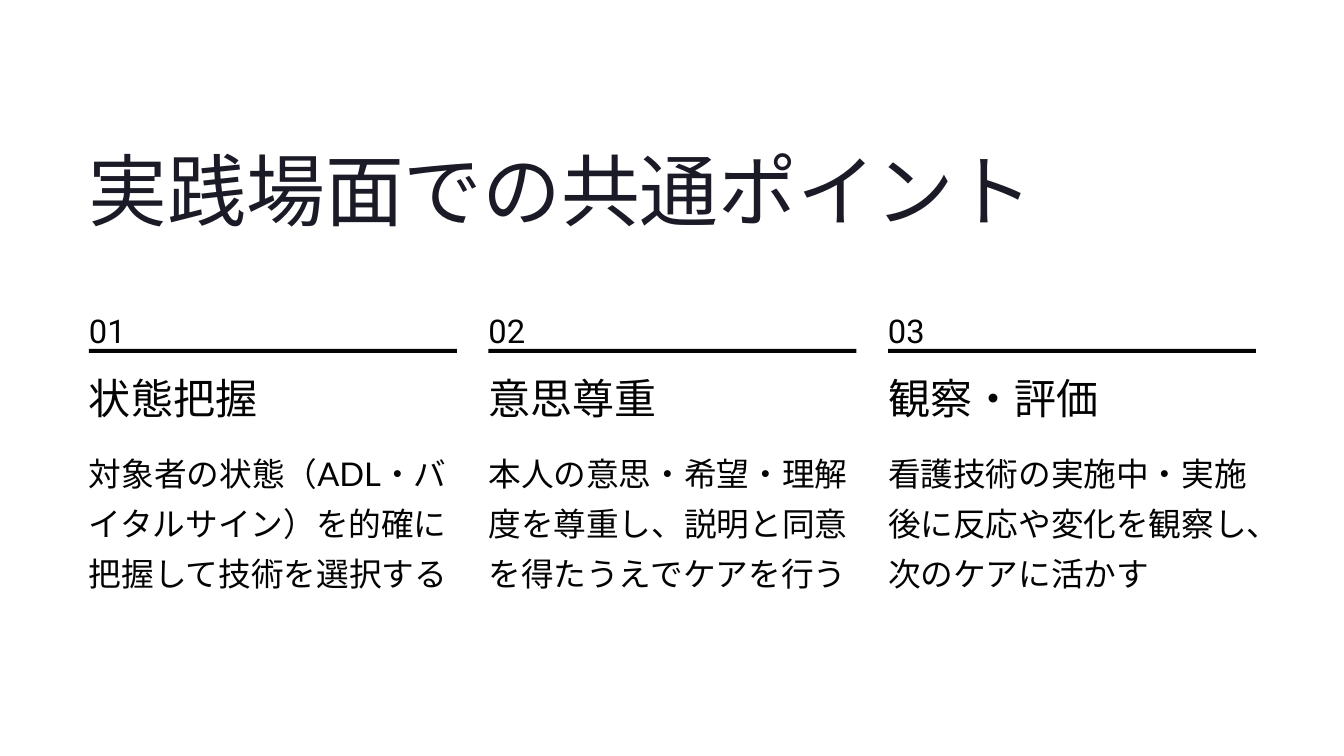
import pptx
import pptx.util
import pptx.dml.color
import pptx.enum.lang
import pptx.enum.shapes
import pptx.enum.text
from dataclasses import dataclass
from lxml import etree
from pptx.oxml.ns import qn

# Content
HEADLINE = "実践場面での共通ポイント"
POINTS = [
    ("01", "状態把握", "対象者の状態（ADL・バイタルサイン）を的確に把握して技術を選択する"),
    ("02", "意思尊重", "本人の意思・希望・理解度を尊重し、説明と同意を得たうえでケアを行う"),
    ("03", "観察・評価", "看護技術の実施中・実施後に反応や変化を観察し、次のケアに活かす"),
]


# Theme: each style is font, size, line spacing, colour
@dataclass(frozen=True)
class Theme:
    ink: str = "030303"
    headline: tuple = ("Inter", 67.5, 84.5, "1B1B27")
    number: tuple = ("Roboto", 28, 43, ink)
    heading: tuple = ("Inter", 36, 42, ink)
    detail: tuple = ("Lato", 28, 43, ink)


THEME = Theme()

# Layout in px, 84 to the inch
PX = pptx.util.Inches(1) // 84
SLIDE_W, SLIDE_H = 1344, 756
LEFT, RIGHT, COLUMN_W = 89, 1256, 368
PITCH = (RIGHT - LEFT - COLUMN_W) / (len(POINTS) - 1)
HEADLINE_BOX = (LEFT, 138, 951, 99)
NUMBER_Y, NUMBER_W, NUMBER_H = 300, 32, 39
RULE_Y, RULE_H = 349, 4
HEADING_Y, HEADING_H = 374, 50
DETAIL_Y, DETAIL_H = 443, 152


def emu(*lengths):
    return [round(length * PX) for length in lengths]


def write(holder, text, style, wrap=False):
    typeface, size, spacing, colour = style
    frame = holder.text_frame
    frame.text = text
    frame.word_wrap = wrap
    frame.auto_size = pptx.enum.text.MSO_AUTO_SIZE.NONE
    frame.vertical_anchor = pptx.enum.text.MSO_ANCHOR.TOP
    frame.margin_left = frame.margin_right = 0
    frame.margin_top = frame.margin_bottom = 0
    paragraph = frame.paragraphs[0]
    paragraph.alignment = pptx.enum.text.PP_ALIGN.LEFT
    paragraph.line_spacing = pptx.util.Pt(spacing)
    paragraph.space_before = pptx.util.Pt(0)
    run = paragraph.runs[0]
    run.font.name = typeface
    run.font.size = pptx.util.Pt(size)
    run.font.color.rgb = pptx.dml.color.RGBColor.from_string(colour)
    run.font.language_id = pptx.enum.lang.MSO_LANGUAGE_ID.JAPANESE
    # East Asian typeface follows the Latin one
    latin = run.font._element.find(qn("a:latin"))
    east_asian = etree.Element(qn("a:ea"), typeface=typeface)
    latin.addnext(east_asian)


def add_text(slide, box, text, style, wrap=False):
    write(slide.shapes.add_textbox(*emu(*box)), text, style, wrap)


def add_rule(slide, box):
    rule = slide.shapes.add_shape(pptx.enum.shapes.MSO_SHAPE.RECTANGLE, *emu(*box))
    rule.shadow.inherit = False
    rule.fill.solid()
    rule.fill.fore_color.rgb = pptx.dml.color.RGBColor.from_string(THEME.ink)
    rule.line.fill.background()


def main():
    deck = pptx.Presentation()
    deck.slide_width, deck.slide_height = emu(SLIDE_W, SLIDE_H)
    slide = deck.slides.add_slide(deck.slide_layouts[5])

    # Headline
    headline = slide.shapes.title
    headline.left, headline.top, headline.width, headline.height = emu(*HEADLINE_BOX)
    write(headline, HEADLINE, THEME.headline)

    # Three columns of points
    for column, (number, heading, detail) in enumerate(POINTS):
        x = LEFT + column * PITCH
        add_text(slide, (x, NUMBER_Y, NUMBER_W, NUMBER_H), number, THEME.number)
        add_rule(slide, (x, RULE_Y, COLUMN_W, RULE_H))
        add_text(slide, (x, HEADING_Y, COLUMN_W, HEADING_H), heading, THEME.heading)
        add_text(slide, (x, DETAIL_Y, COLUMN_W, DETAIL_H), detail, THEME.detail, wrap=True)

    deck.save("out.pptx")


if __name__ == "__main__":
    main()
